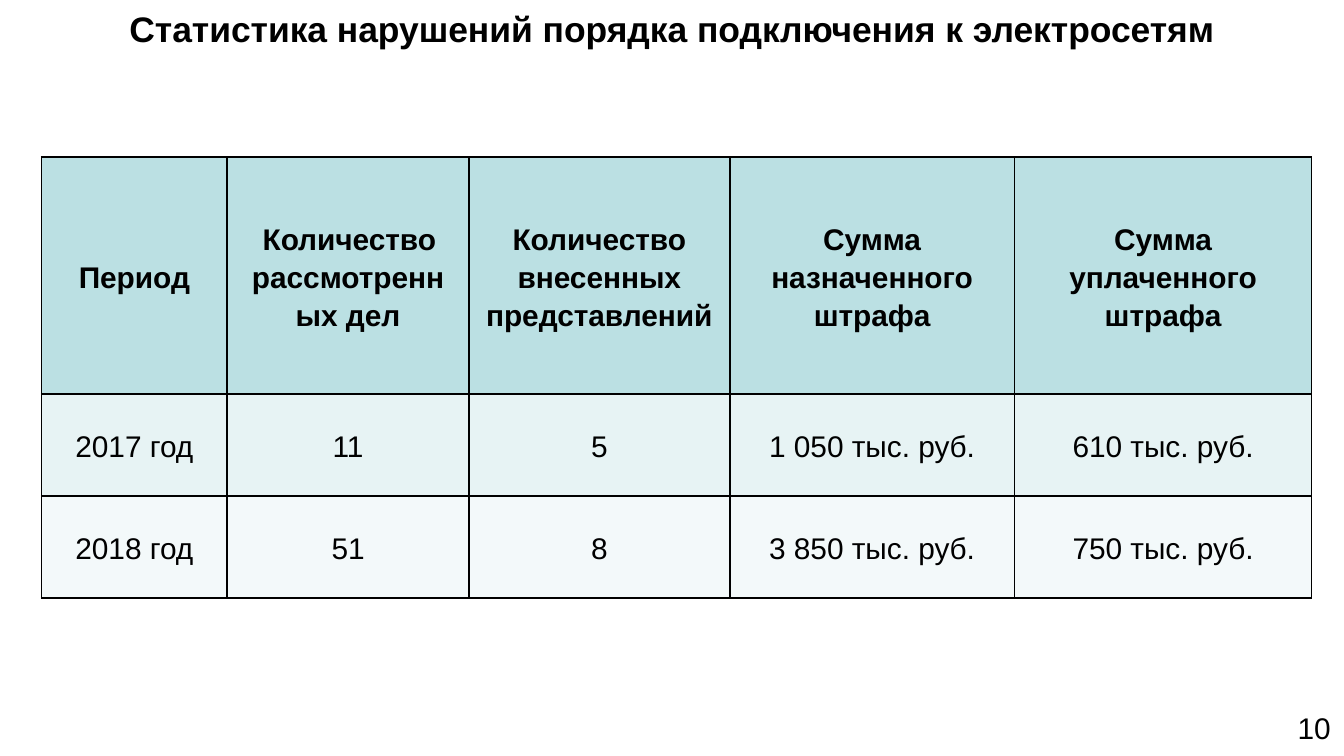
import pptx
import pptx.dml.color
import pptx.enum.text
import pptx.oxml
import pptx.oxml.ns
import pptx.util
from pptx.util import Inches

COLORS = {
    "text": "000000",
    "border": "000000",
    "header": "BBE0E3",
    "odd_row": "E7F3F4",
    "even_row": "F3F9FA",
}
ALIGN = pptx.enum.text.PP_ALIGN
ANCHOR = pptx.enum.text.MSO_ANCHOR


def rgb(name):
    return pptx.dml.color.RGBColor.from_string(COLORS[name])


class SlideBuilder:
    """Holds the text style and the current slide."""

    font_name = "Arial"
    text_size = 16
    title_size = 19

    def __init__(self, page):
        self.page = page

    def format_paragraph(self, para, size, align, bold=False):
        para.alignment = align
        para.font.name = self.font_name
        para.font.size = pptx.util.Pt(size)
        para.font.bold = bold
        para.font.color.rgb = rgb("text")

    def title(self, text, left, top, width, height):
        box = self.page.shapes.title
        box.left, box.top = Inches(left), Inches(top)
        box.width, box.height = Inches(width), Inches(height)
        frame = box.text_frame
        frame.text = text
        frame.vertical_anchor = ANCHOR.TOP
        frame.auto_size = pptx.enum.text.MSO_AUTO_SIZE.SHAPE_TO_FIT_TEXT
        self.format_paragraph(frame.paragraphs[0], self.title_size, ALIGN.CENTER, True)

    def text_box(self, text, left, top, width, height, align):
        box = self.page.shapes.add_textbox(
            Inches(left), Inches(top), Inches(width), Inches(height))
        box.text_frame.word_wrap = True
        box.text_frame.text = text
        self.format_paragraph(box.text_frame.paragraphs[0], self.text_size, align)

    def cell_borders(self, cell):
        properties = cell._tc.get_or_add_tcPr()
        for position, side in enumerate(("lnL", "lnR", "lnT", "lnB")):
            line = pptx.oxml.parse_xml(
                f'<a:{side} {pptx.oxml.ns.nsdecls("a")} w="{pptx.util.Pt(1)}">'
                f'<a:solidFill><a:srgbClr val="{COLORS["border"]}"/></a:solidFill>'
                f'</a:{side}>')
            properties.insert(position, line)

    def table(self, rows, fills, left, top, widths, heights):
        table = self.page.shapes.add_table(
            len(rows), len(widths), Inches(left), Inches(top),
            Inches(sum(widths)), Inches(sum(heights))).table
        for column, width in zip(table.columns, widths):
            column.width = Inches(width)
        for row, height in zip(table.rows, heights):
            row.height = Inches(height)
        for row_index, (texts, fill) in enumerate(zip(rows, fills)):
            for column_index, text in enumerate(texts):
                cell = table.cell(row_index, column_index)
                cell.text = text
                cell.vertical_anchor = ANCHOR.MIDDLE
                cell.fill.solid()
                cell.fill.fore_color.rgb = rgb(fill)
                self.cell_borders(cell)
                para = cell.text_frame.paragraphs[0]
                para.line_spacing = 1.15
                para.space_after = pptx.util.Pt(10)
                self.format_paragraph(para, self.text_size, ALIGN.CENTER, row_index == 0)
        return table


def main():
    # Widescreen 16:9 deck
    deck = pptx.Presentation()
    deck.slide_width = Inches(10)
    deck.slide_height = deck.slide_width * 9 // 16
    builder = SlideBuilder(deck.slides.add_slide(deck.slide_layouts[5]))

    # Page number
    builder.text_box("10", 7.67, 5.23, 2.33, 0.25, ALIGN.RIGHT)

    # Title
    builder.title("Статистика нарушений порядка подключения к электросетям",
                  0, 0, 10, 0.42)

    # Violations by year
    rows = [
        ["Период", "Количество рассмотренных дел", "Количество внесенных представлений",
         "Сумма назначенного штрафа", "Сумма уплаченного штрафа"],
        ["2017 год", "11", "5", "1 050 тыс. руб.", "610 тыс. руб."],
        ["2018 год", "51", "8", "3 850 тыс. руб.", "750 тыс. руб."],
    ]
    table = builder.table(rows, ["header", "odd_row", "even_row"], 0.31, 1.17,
                          [1.38, 1.8, 1.94, 2.12, 2.21], [1.76, 0.76, 0.76])

    # First-line indent of the case count heading
    heading = table.cell(0, 1).text_frame.paragraphs[0]
    heading._p.get_or_add_pPr().set("indent", str(Inches(0.02)))

    deck.save("out.pptx")


if __name__ == "__main__":
    main()
